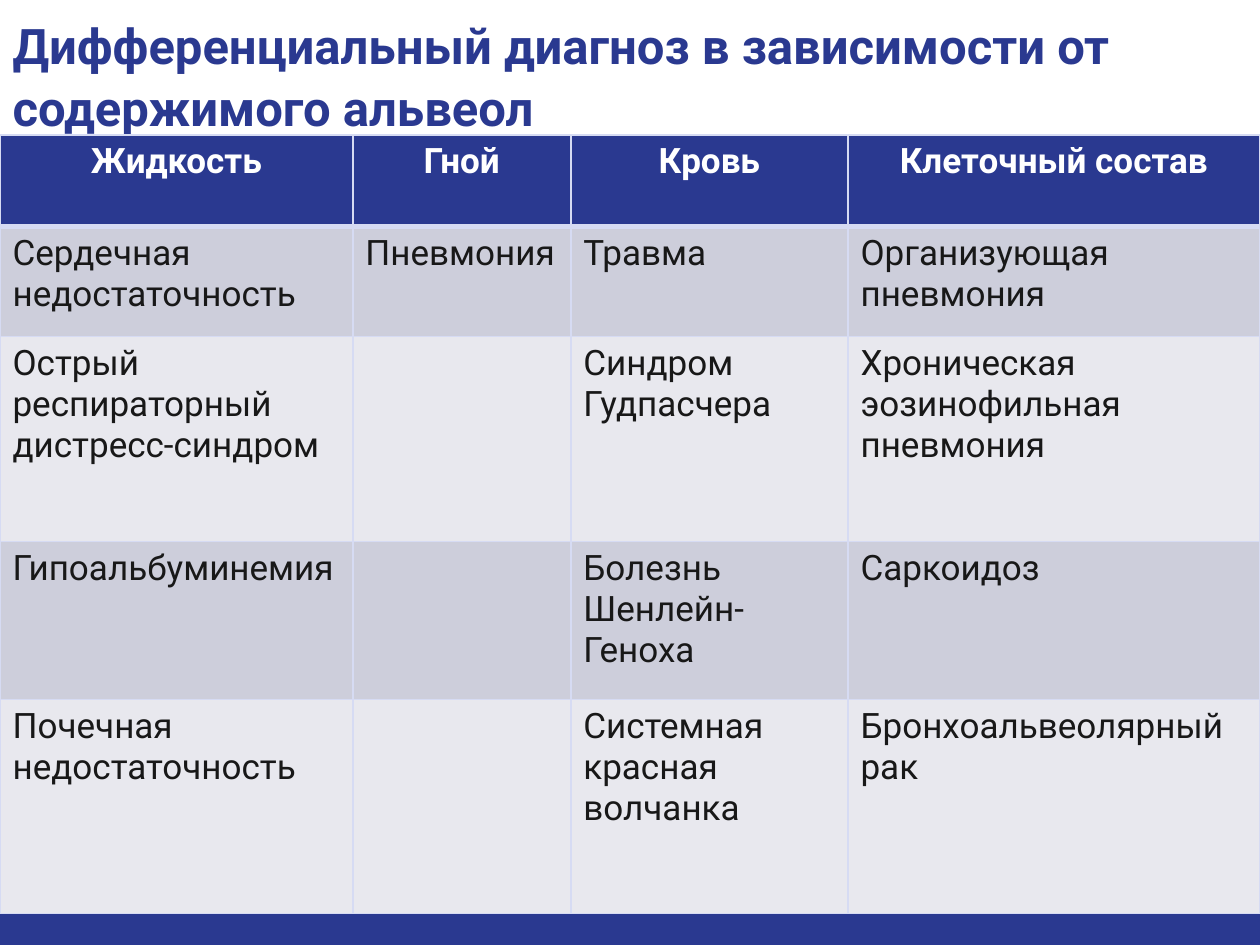
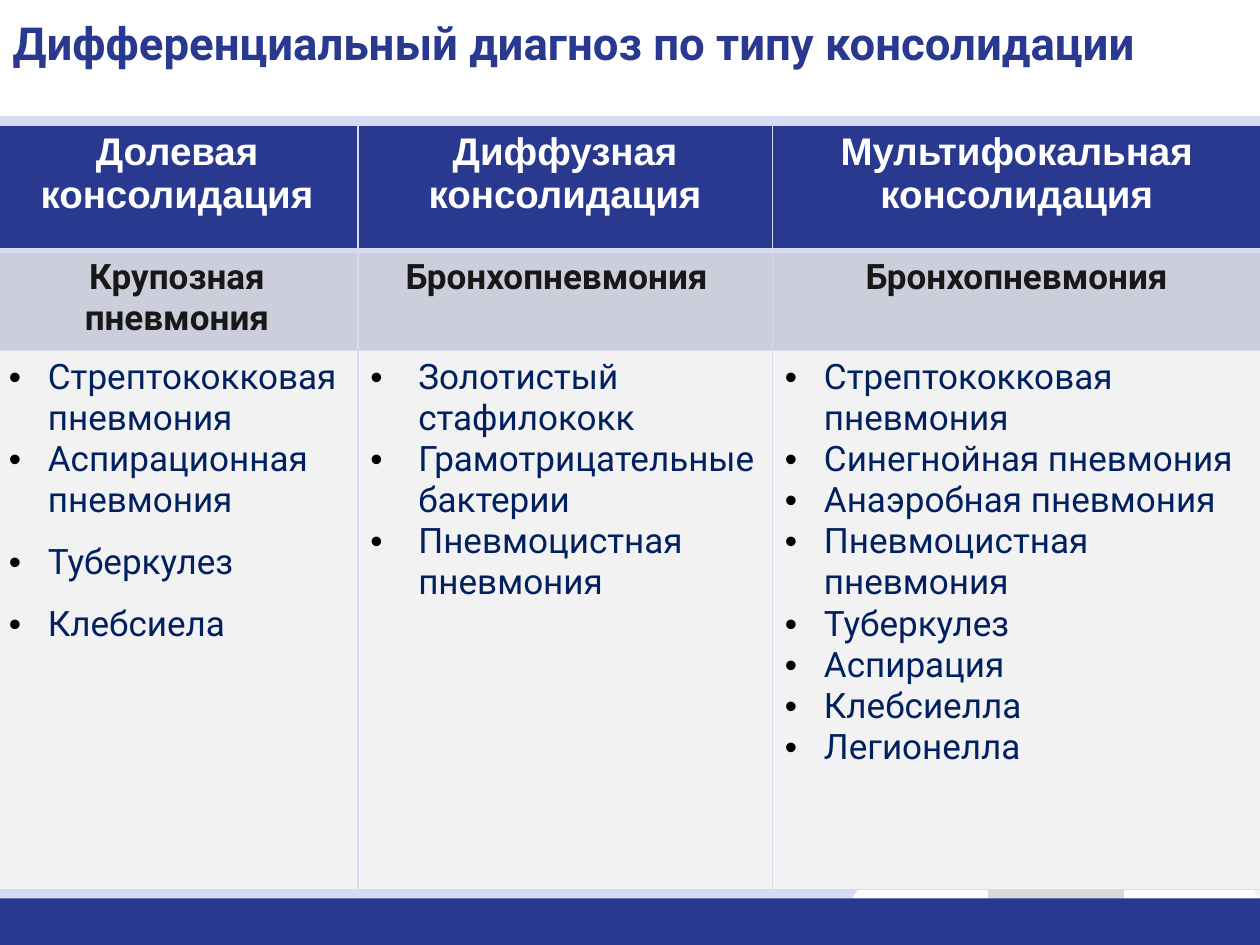
from lxml import etree
from pptx import Presentation
from pptx.dml.color import RGBColor
from pptx.enum.shapes import MSO_SHAPE
from pptx.enum.text import MSO_ANCHOR, MSO_AUTO_SIZE, PP_ALIGN
from pptx.oxml.ns import qn
from pptx.util import Inches, Pt

RECT, TRI = MSO_SHAPE.RECTANGLE, MSO_SHAPE.RIGHT_TRIANGLE
LEFT, MID = PP_ALIGN.LEFT, PP_ALIGN.CENTER
TOP, FIXED = MSO_ANCHOR.TOP, MSO_AUTO_SIZE.NONE

BLUE = RGBColor(0x2A, 0x39, 0x90)
NAVY = RGBColor(0x00, 0x20, 0x60)
PALE = RGBColor(0xD6, 0xDB, 0xF3)
WHITE = RGBColor(0xFF, 0xFF, 0xFF)
INK = RGBColor(0x18, 0x18, 0x18)
BLACK = RGBColor(0x00, 0x00, 0x00)
GREY = RGBColor(0xD8, 0xD8, 0xD8)
MIST = RGBColor(0xF2, 0xF2, 0xF2)
DARK = RGBColor(0xCD, 0xCE, 0xDB)
LIGHT = RGBColor(0xE8, 0xE8, 0xEE)
FONT = "Roboto"

CAUSES = [
    ["Жидкость", "Гной", "Кровь", "Клеточный состав"],
    ["Сердечная недостаточность", "Пневмония", "Травма",
     "Организующая пневмония"],
    ["Острый респираторный дистресс-синдром", "", "Синдром Гудпасчера",
     "Хроническая эозинофильная пневмония"],
    ["Гипоальбуминемия", "", "Болезнь Шенлейн-Геноха", "Саркоидоз"],
    ["Почечная недостаточность", "", "Системная красная волчанка",
     "Бронхоальвеолярный рак"],
]
TYPES = ["Долевая консолидация", "Диффузная консолидация",
         "Мультифокальная консолидация"]
FORMS = ["Крупозная пневмония", "Бронхопневмония", "Бронхопневмония"]
# Per column: hanging indent, then items with their line spacing
LISTS = [
    (0.31, [("Стрептококковая пневмония", 1), ("Аспирационная пневмония", 1),
            ("Туберкулез", 1.5), ("Клебсиела", 1.5)]),
    (0.38, [("Золотистый стафилококк", 1), ("Грамотрицательные бактерии", 1),
            ("Пневмоцистная пневмония", 1)]),
    (0.31, [(name, 1) for name in (
        "Стрептококковая пневмония", "Синегнойная пневмония",
        "Анаэробная пневмония", "Пневмоцистная пневмония", "Туберкулез",
        "Аспирация", "Клебсиелла", "Легионелла")]),
]


def write(para, text, size, color, bold=False, font=FONT, align=LEFT):
    para.alignment = align
    run = para.add_run()
    run.text = text
    run.font.size, run.font.name, run.font.bold = Pt(size), font, bold
    run.font.color.rgb = color


def block(slide, kind, box, color):
    shape = slide.shapes.add_shape(kind, *map(Inches, box))
    shape.shadow.inherit = False
    shape.fill.solid()
    shape.fill.fore_color.rgb = color
    shape.line.fill.background()
    return shape


def base(slide):
    """Corner ornament and bottom band."""
    wide, high = 1.08, 1.44
    left, top = 10 - 3 * wide, 7.13 - high
    spots = [(left + i * wide, top, wide, high) for i in range(3)]
    block(slide, TRI, spots[2], WHITE)
    wing = block(slide, TRI, spots[0], WHITE)
    wing.element.spPr.find(qn("a:xfrm")).set("flipH", "1")
    block(slide, RECT, spots[1], GREY)
    block(slide, TRI, spots[2], MIST).rotation = 180
    block(slide, RECT, (0, 7.13, 10, 0.37), BLUE)


def head(slide, text, high, size):
    """White title band across the top."""
    title = slide.shapes.title
    title.left, title.top, title.width, title.height = map(
        Inches, (0, 0, 10, high))
    title.fill.solid()
    title.fill.fore_color.rgb = WHITE
    frame = title.text_frame
    frame.word_wrap, frame.auto_size = True, FIXED
    frame.vertical_anchor = TOP
    frame.margin_left = frame.margin_right = Inches(0.1)
    frame.margin_top = frame.margin_bottom = Inches(0.1)
    para = frame.paragraphs[0]
    para.line_spacing = 1.05
    write(para, text, size, BLUE, True)


def paint(cell, color, base_pt=1, top_pt=1):
    """Cell borders, then fill."""
    props = cell._tc.get_or_add_tcPr()
    for side, width in zip("LRTB", (1, 1, top_pt, base_pt)):
        line = etree.SubElement(props, qn("a:ln" + side), w=str(Pt(width)))
        solid = etree.SubElement(line, qn("a:solidFill"))
        etree.SubElement(solid, qn("a:srgbClr"), val=str(PALE))
    cell.fill.solid()
    cell.fill.fore_color.rgb = color


def grid(slide, left, top, cols, rows, fills):
    """Table with one fill per row and a thick rule under the first."""
    table = slide.shapes.add_table(
        len(rows), len(cols), Inches(left), Inches(top),
        Inches(sum(cols)), Inches(sum(rows))).table
    for col, width in zip(table.columns, cols):
        col.width = Inches(width)
    for i, (row, high) in enumerate(zip(table.rows, rows)):
        row.height = Inches(high)
        for cell in row.cells:
            paint(cell, fills[i], 3 if i == 0 else 1, 3 if i == 1 else 1)
    return table


def items(cell, indent, entries):
    """Bulleted list inside a cell."""
    frame = cell.text_frame
    for i, (text, space) in enumerate(entries):
        para = frame.add_paragraph() if i else frame.paragraphs[0]
        props = para._p.get_or_add_pPr()
        props.set("marL", str(Inches(indent)))
        props.set("indent", str(-Inches(indent)))
        color = etree.SubElement(props, qn("a:buClr"))
        etree.SubElement(color, qn("a:srgbClr"), val=str(BLACK))
        etree.SubElement(props, qn("a:buFont"), typeface="Arial")
        etree.SubElement(props, qn("a:buChar"), char="•")
        para.line_spacing = float(space)
        write(para, text, 20, NAVY)


def causes(slide):
    """Diagnosis by what fills the alveoli."""
    head(slide, "Дифференциальный диагноз в зависимости от "
                "содержимого альвеол", 1.07, 28)
    table = grid(slide, 0, 1.07, (2.8, 1.73, 2.2, 3.27),
                 (0.73, 0.87, 1.63, 1.25, 1.7),
                 (BLUE, DARK, LIGHT, DARK, LIGHT))
    for i, (row, texts) in enumerate(zip(table.rows, CAUSES)):
        for cell, text in zip(row.cells, texts):
            para = cell.text_frame.paragraphs[0]
            if not text:
                para.font.size = Pt(20)
            elif i == 0:
                write(para, text, 20, WHITE, True, align=MID)
            else:
                write(para, text, 20, INK)


def types(slide):
    """Diagnosis by type of consolidation."""
    head(slide, "Дифференциальный диагноз по типу консолидации", 0.92, 26)
    table = grid(slide, -0.03, 0.99, (2.87, 3.29, 3.88), (1, 0.79, 4.28),
                 (BLUE, DARK, MIST))
    for i, (kind, form, (indent, entries)) in enumerate(
            zip(TYPES, FORMS, LISTS)):
        top, mid, low = (table.cell(row, i) for row in range(3))
        write(top.text_frame.paragraphs[0], kind, 22, WHITE, True,
              "Arial", MID)
        shift = i == 1
        if shift:
            mid.margin_left = Inches(0.38)
        write(mid.text_frame.paragraphs[0], form, 20, INK, True,
              align=LEFT if shift else MID)
        items(low, indent, entries)


def main():
    deck = Presentation()
    deck.slide_width, deck.slide_height = Inches(10), Inches(7.5)
    back = deck.slide_master.background.fill
    back.solid()
    back.fore_color.rgb = PALE
    for build in (causes, types):
        slide = deck.slides.add_slide(deck.slide_layouts[5])
        base(slide)
        build(slide)
    deck.save("out.pptx")


if __name__ == "__main__":
    main()
